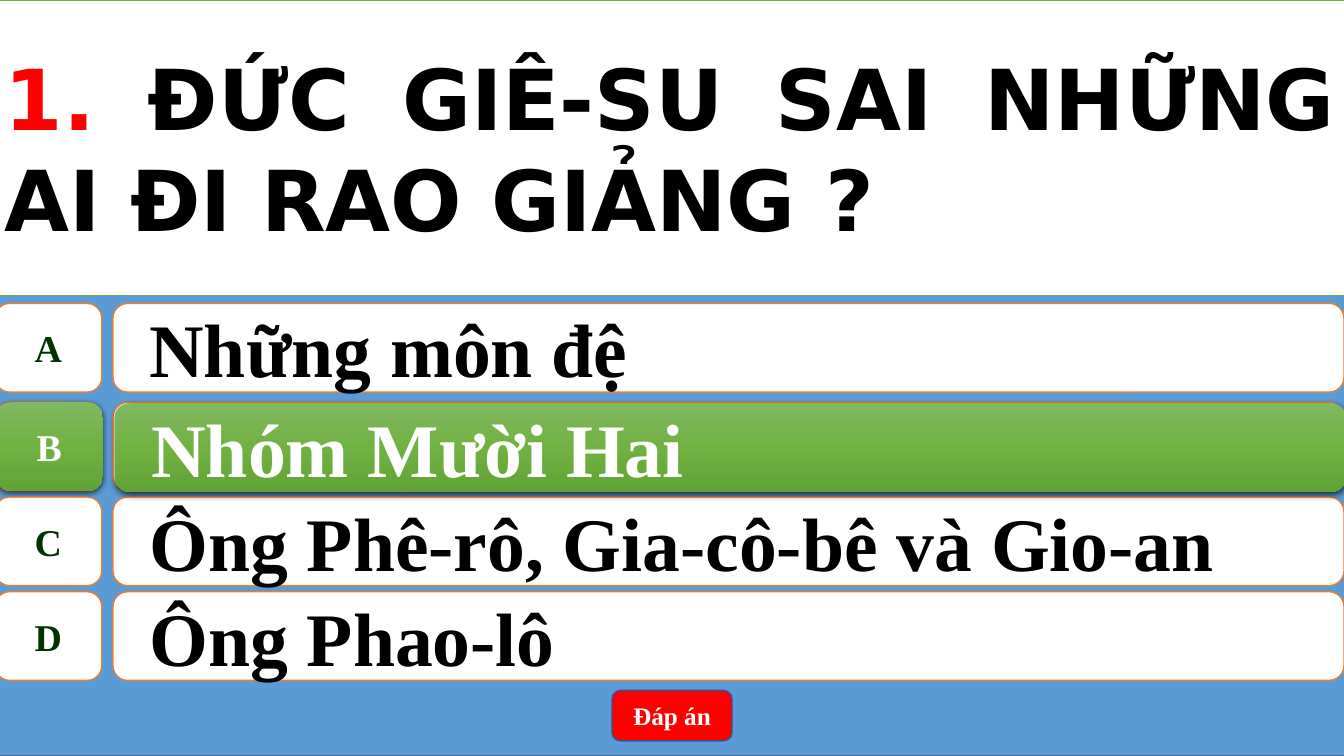
from lxml import etree
from pptx import Presentation
from pptx.dml.color import RGBColor
from pptx.enum.shapes import MSO_SHAPE
from pptx.enum.text import MSO_ANCHOR, PP_ALIGN
from pptx.oxml.ns import qn
from pptx.util import Inches, Pt

RECT, ROUND = MSO_SHAPE.RECTANGLE, MSO_SHAPE.ROUNDED_RECTANGLE
ALTERNATE = MSO_SHAPE.FLOWCHART_ALTERNATE_PROCESS
CENTER, LEFT, JUSTIFY = PP_ALIGN.CENTER, PP_ALIGN.LEFT, PP_ALIGN.JUSTIFY
MIDDLE = MSO_ANCHOR.MIDDLE

WHITE = RGBColor(0xFF, 0xFF, 0xFF)
BLACK = RGBColor(0x00, 0x00, 0x00)
RED = RGBColor(0xFF, 0x00, 0x00)
BLUE = RGBColor(0x5B, 0x9B, 0xD5)
BLUE_EDGE = RGBColor(0x43, 0x73, 0x9E)
BUTTON_EDGE = RGBColor(0x32, 0x54, 0x91)
GREEN = RGBColor(0x70, 0xAD, 0x47)
DARK_GREEN = RGBColor(0x00, 0x33, 0x00)
ORANGE = RGBColor(0xED, 0x7D, 0x31)
GREEN_STOPS = [(0, RGBColor(0x81, 0xB8, 0x61)),
               (50, RGBColor(0x6F, 0xB2, 0x42)),
               (100, RGBColor(0x62, 0xA3, 0x36))]
SERIF, SANS = "Times New Roman", "DejaVu Sans"

# Content
QUESTION = [("1. ", RED), ("ĐỨC GIÊ-SU SAI NHỮNG AI ĐI RAO GIẢNG ?", BLACK)]
ANSWERS = [("A", "Những môn đệ"),
           ("B", "Nhóm Mười Hai"),
           ("C", "Ông Phê-rô, Gia-cô-bê và Gio-an"),
           ("D", "Ông Phao-lô")]
CORRECT = 1
BUTTON = "Đáp án"

# Grid, in inches
SLIDE_W, SLIDE_H = 13.33, 7.5
EDGE, FULL_W = -0.05, 13.39
QUESTION_H = 2.93
ROW_TOPS = [3.01] + [3.99 + 0.94 * i for i in range(3)]
ROW_H = 0.88
LETTER_W = 1.06
ANSWER_X, ANSWER_W = 1.12, 12.21
BUTTON_W, BUTTON_H, BUTTON_Y = 1.19, 0.5, 6.85

prs = Presentation()
prs.slide_width, prs.slide_height = Inches(SLIDE_W), Inches(SLIDE_H)
slide = prs.slides.add_slide(prs.slide_layouts[6])


def add_box(kind, x, y, w, h, fill=None, line=None):
    s = slide.shapes.add_shape(kind, Inches(x), Inches(y), Inches(w), Inches(h))
    s.shadow.inherit = False
    if fill is not None:
        s.fill.solid()
        s.fill.fore_color.rgb = fill
    if line is None:
        s.line.fill.background()
    else:
        s.line.color.rgb = line
        s.line.width = Pt(1)
    return s


def write(s, runs, size, font=SERIF, align=CENTER, wrap=True):
    tf = s.text_frame
    tf.word_wrap = wrap
    tf.vertical_anchor = MIDDLE
    p = tf.paragraphs[0]
    p.alignment = align
    for text, color in runs:
        r = p.add_run()
        r.text = text
        r.font.name, r.font.size, r.font.bold = font, Pt(size), True
        r.font.color.rgb = color
    return p


def add_green_glow(s):
    """Three-stop vertical gradient with a soft shadow below."""
    s.fill.gradient()
    s.fill.gradient_angle = 270
    sp_pr = s._element.spPr
    stops = sp_pr.find(qn("a:gradFill")).find(qn("a:gsLst"))
    for old in list(stops):
        stops.remove(old)
    for pos, color in GREEN_STOPS:
        gs = etree.SubElement(stops, qn("a:gs"), pos=str(pos * 1000))
        etree.SubElement(gs, qn("a:srgbClr"), val=str(color))
    shadow = etree.SubElement(sp_pr.find(qn("a:effectLst")), qn("a:outerShdw"),
                              blurRad=str(Pt(4.5)), dist=str(Pt(1.5)),
                              dir="5400000", algn="ctr", rotWithShape="0")
    black = etree.SubElement(shadow, qn("a:srgbClr"), val=str(BLACK))
    etree.SubElement(black, qn("a:alpha"), val="63000")


def add_answer(row, correct=False):
    letter, answer = ANSWERS[row]
    y = ROW_TOPS[row]
    fill, line = (None, None) if correct else (WHITE, ORANGE)
    shift = 0.01 if correct else 0
    tag = add_box(ALTERNATE, EDGE + shift, y, LETTER_W, ROW_H, fill, line)
    bar = add_box(ROUND, ANSWER_X + 2 * shift, y + shift, ANSWER_W, ROW_H, fill, line)
    bar.adjustments[0] = 0.167
    if correct:
        add_green_glow(tag)
        add_green_glow(bar)
    write(tag, [(letter, WHITE if correct else DARK_GREEN)], 27, wrap=False)
    p = write(bar, [(answer, WHITE if correct else BLACK)], 54, align=LEFT)
    p.level = 1
    p_pr = p._p.get_or_add_pPr()
    p_pr.set("marL", str(Inches(0.5)))
    p_pr.set("indent", str(Inches(-0.28)))


# Backdrop
add_box(RECT, EDGE, 0, FULL_W, SLIDE_H, BLUE, BLUE_EDGE)

# Answer rows, then the green highlight over the correct one
for row in range(len(ANSWERS)):
    add_answer(row)
add_answer(CORRECT, correct=True)

# Answer button
button = add_box(ROUND, (SLIDE_W - BUTTON_W) / 2, BUTTON_Y, BUTTON_W, BUTTON_H,
                 RED, BUTTON_EDGE)
write(button, [(BUTTON, WHITE)], 18)

# Question panel
panel = add_box(RECT, EDGE, 0, FULL_W, QUESTION_H, WHITE, GREEN)
write(panel, QUESTION, 60, font=SANS, align=JUSTIFY)

prs.save("out.pptx")
